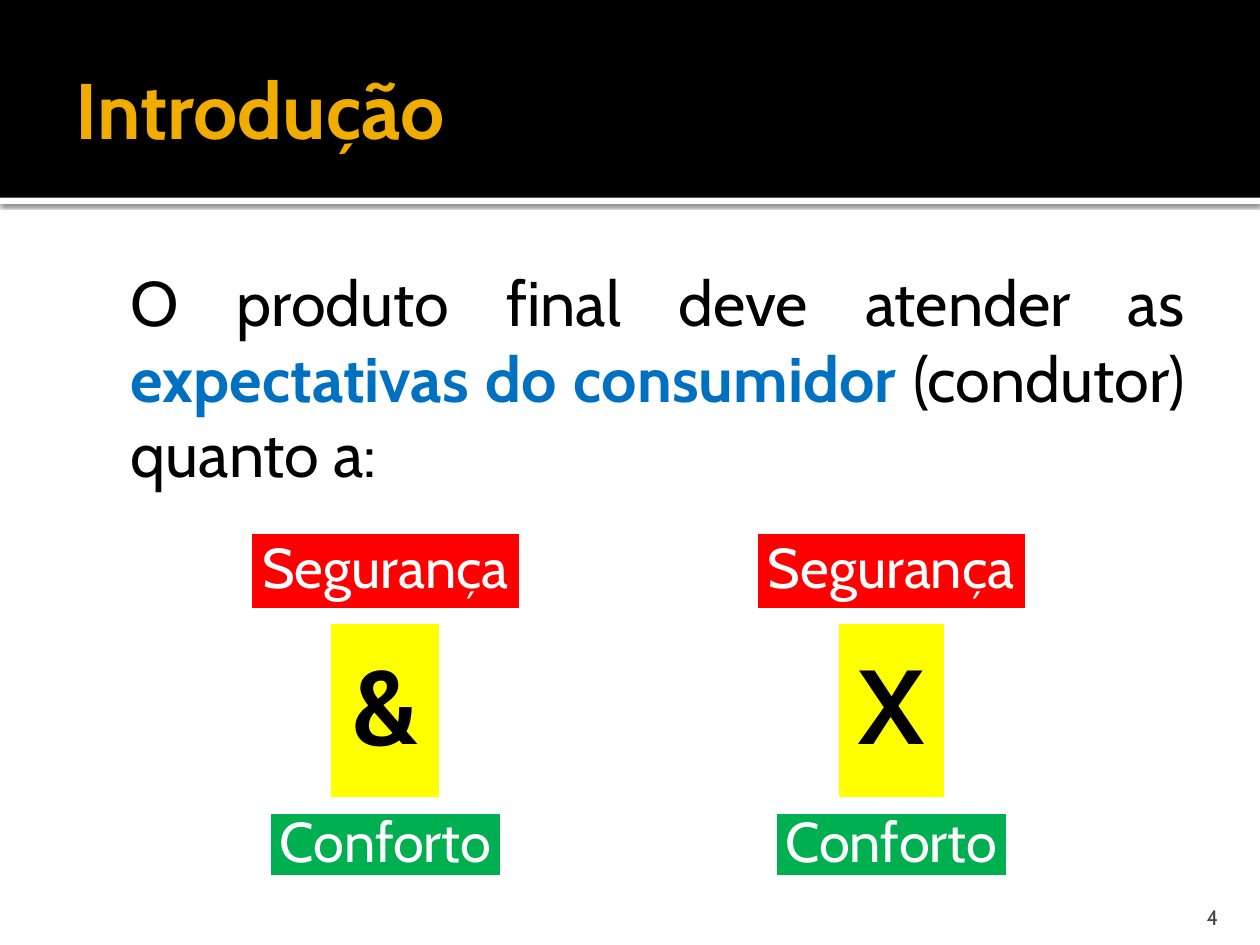
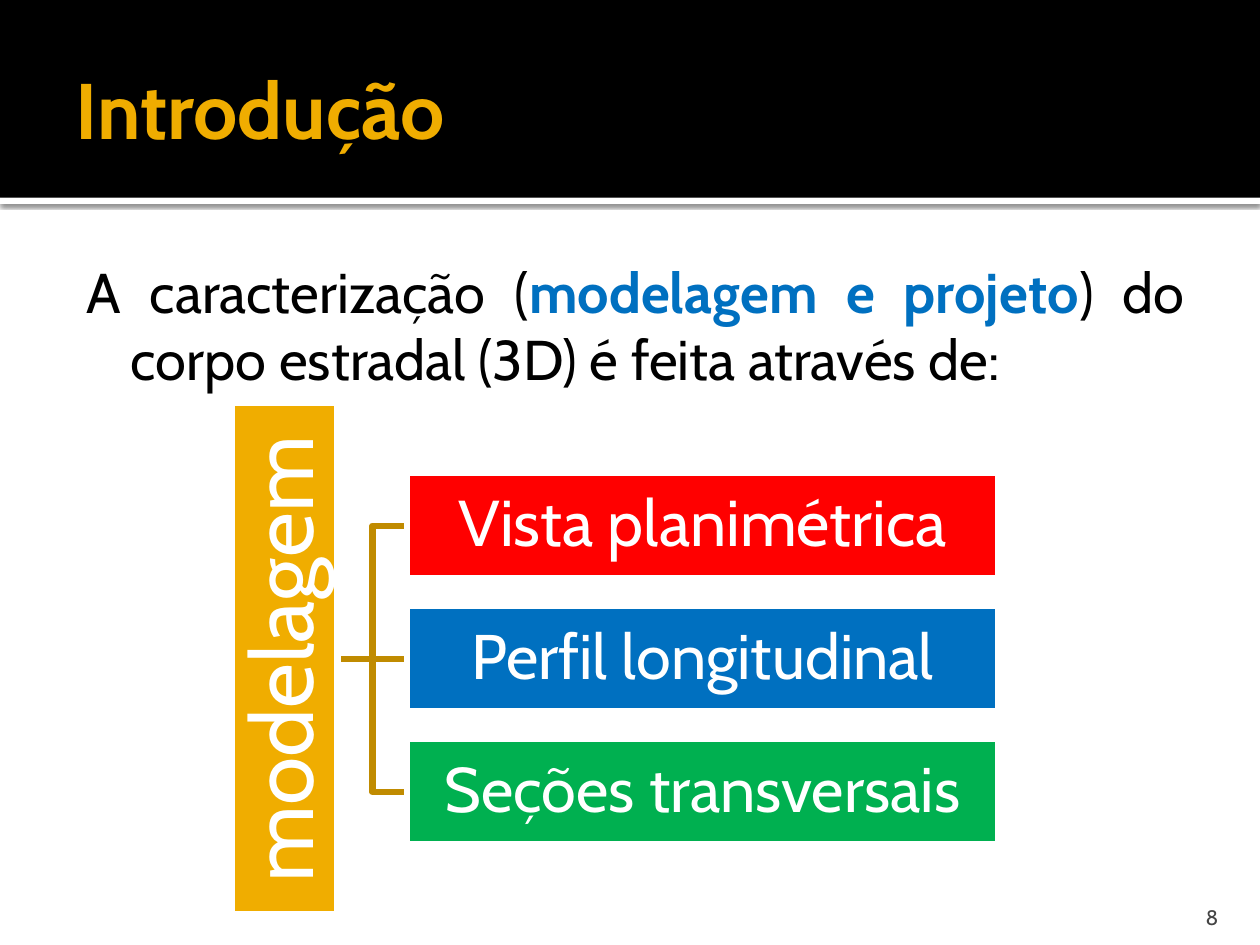
from lxml import etree
from pptx import Presentation
from pptx.dml.color import RGBColor
from pptx.enum import shapes, text
from pptx.oxml import ns
from pptx.util import Pt

FONT = "Cabin"
COLOURS = {
    "black": "000000", "white": "FFFFFF", "gold": "F0AD00", "bronze": "C08B00",
    "blue": "0070C0", "red": "FF0000", "green": "00B050", "yellow": "FFFF00",
    "grey": "454545",
}
WIDTH, HEIGHT = 720, 540
BAND_HEIGHT = 113
OUTLINE = 3.78


def colour(name):
    return RGBColor.from_string(COLOURS[name])


def add_span(para, words, size=36, ink="black", bold=False):
    span = para.add_run()
    span.text = words
    span.font.name = FONT
    span.font.size = Pt(size)
    span.font.bold = bold
    span.font.color.rgb = colour(ink)


class Painter:
    """Holds the deck and the page being drawn; all lengths are in points."""

    def __init__(self):
        self.deck = Presentation()
        self.deck.slide_width, self.deck.slide_height = Pt(WIDTH), Pt(HEIGHT)
        self.page = None

    def start_page(self, title, number):
        self.page = self.deck.slides.add_slide(self.deck.slide_layouts[5])
        # Header band and shadowed strip, placed behind the title
        heading = self.page.shapes.title
        strip = self.rectangle(0, BAND_HEIGHT, WIDTH, 3.6, "white")
        self.cast_shadow(strip)
        band = self.rectangle(0, 0, WIDTH, BAND_HEIGHT, "black")
        for part in (strip, band):
            heading.element.addprevious(part.element)
        # Title
        heading.left, heading.top, heading.width, heading.height = (
            Pt(value) for value in (36, 12.25, 648, 98.6))
        para = self.frame(heading, (7.2, 3.6, 3.6, 3.6), "MIDDLE", "LEFT")
        add_span(para, title, size=45, ink="gold", bold=True)
        # Page number
        self.text_box(645.8, 509.8, 57.6, 21.6, [(number, {"size": 12, "ink": "grey"})],
                      insets=(7.2, 3.6, 7.2, 0), anchor="BOTTOM", align="RIGHT")

    def frame(self, box, insets, anchor, align):
        frame = box.text_frame
        frame.word_wrap = True
        frame.auto_size = text.MSO_AUTO_SIZE.NONE
        frame.vertical_anchor = text.MSO_ANCHOR[anchor]
        (frame.margin_left, frame.margin_top,
         frame.margin_right, frame.margin_bottom) = (Pt(value) for value in insets)
        para = frame.paragraphs[0]
        para.alignment = text.PP_ALIGN[align]
        return para

    def text_box(self, left, top, width, height, spans, insets, anchor="TOP", align="JUSTIFY"):
        box = self.page.shapes.add_textbox(Pt(left), Pt(top), Pt(width), Pt(height))
        para = self.frame(box, insets, anchor, align)
        for words, style in spans:
            add_span(para, words, **style)
        return para

    def body(self, spans, size, hanging=0, top_inset=7.2):
        spans = [(words, {"size": size, **style}) for words, style in spans]
        para = self.text_box(36, 139.7, 648, 364.3, spans, (4.3, top_inset, 7.2, 3.6))
        properties = para._p.get_or_add_pPr()
        properties.set("marL", str(Pt(34.5)))
        properties.set("indent", str(-Pt(hanging)))

    def rectangle(self, left, top, width, height, fill, outline=None):
        box = self.page.shapes.add_shape(
            shapes.MSO_SHAPE.RECTANGLE, Pt(left), Pt(top), Pt(width), Pt(height))
        box.shadow.inherit = False
        box.fill.solid()
        box.fill.fore_color.rgb = colour(fill)
        if outline:
            self.stroke(box, outline)
        else:
            box.line.fill.background()
        return box

    def label(self, left, top, width, height, words, fill, inset, **style):
        box = self.rectangle(left, top, width, height, fill, "white")
        para = self.frame(box, (inset,) * 4, "MIDDLE", "CENTER")
        para.line_spacing = 0.9
        add_span(para, words, **style)
        return box

    def stroke(self, item, ink):
        item.line.color.rgb = colour(ink)
        item.line.width = Pt(OUTLINE)

    def cast_shadow(self, box):
        effects = box.element.spPr.find(ns.qn("a:effectLst"))
        shadow = etree.SubElement(effects, ns.qn("a:outerShdw"), blurRad=str(Pt(2.5)),
                                  dist=str(Pt(0.8)), dir="5400000", algn="tl", rotWithShape="0")
        tint = etree.SubElement(shadow, ns.qn("a:srgbClr"), val=COLOURS["black"])
        etree.SubElement(tint, ns.qn("a:alpha"), val="60000")

    def elbow(self, points):
        start, *rest = [(Pt(x), Pt(y)) for x, y in points]
        builder = self.page.shapes.build_freeform(*start)
        builder.add_line_segments(rest, close=False)
        branch = builder.convert_to_shape()
        branch.shadow.inherit = False
        branch.fill.background()
        self.stroke(branch, "bronze")

    def link(self, root, leaf, x, y):
        """Join the visible right side of a root turned by 270° to a leaf's left side."""
        line = self.page.shapes.add_connector(
            shapes.MSO_CONNECTOR.STRAIGHT, Pt(x), Pt(y), leaf.left, Pt(y))
        line.begin_connect(root, 2)
        line.end_connect(leaf, 1)
        line.begin_x, line.begin_y = Pt(x), line.end_y
        self.stroke(line, "bronze")
        etree.SubElement(line.element.spPr, ns.qn("a:effectLst"))
        root.element.addprevious(line.element)


def draw_expectations(painter):
    painter.start_page("Introdução", "4")
    painter.body([
        ("O produto final deve atender as ", {}),
        ("expectativas do consumidor", {"ink": "blue", "bold": True}),
        (" (condutor) quanto a:", {}),
    ], size=36, top_inset=11)
    # Two stacks: safety and comfort, safety versus comfort
    for centre, sign, sign_width in ((220.3, "&", 65.5), (509.4, "X", 64)):
        top = 303.1
        for words, width, height, fill, inset, style in (
            ("Segurança", 156.2, 46.1, "red", 6.5, {"size": 32, "ink": "white"}),
            (sign, sign_width, 103, "yellow", 12.2, {"size": 60, "bold": True}),
            ("Conforto", 134.6, 38.9, "green", 6.5, {"size": 32, "ink": "white"}),
        ):
            painter.label(centre - width / 2, top, width, height, words, fill, inset, **style)
            top += height + 5.4


def draw_modelling(painter):
    painter.start_page("Introdução", "8")
    painter.body([
        ("A caracterização (", {}),
        ("modelagem e projeto", {"ink": "blue", "bold": True}),
        (") do corpo estradal (3D) é feita através de:", {}),
    ], size=32, hanging=25.2)
    # Tree: a turned root, three leaves and the branches between them
    root_x, leaf_x, thickness, step = 193, 232.6, 60.5, 76
    middle_x, middle_y = (root_x + leaf_x) / 2, 376.5
    for offset in (step, -step):
        painter.elbow([(root_x, middle_y), (middle_x, middle_y),
                       (middle_x, middle_y + offset), (leaf_x, middle_y + offset)])
    length = 292.3
    root = painter.label(root_x - (thickness + length) / 2, middle_y - thickness / 2,
                         length, thickness, "modelagem", "gold", 2.2, size=50, ink="white")
    root.rotation = 270
    leaves = [
        painter.label(leaf_x, middle_y - thickness / 2 + row * step, 337.7, thickness,
                      words, fill, 2.2, size=size, ink="white")
        for row, words, fill, size in (
            (-1, "Vista planimétrica", "red", 37),
            (0, "Perfil longitudinal", "blue", 36),
            (1, "Seções transversais", "green", 36))
    ]
    painter.link(root, leaves[1], root_x, middle_y)


def main():
    painter = Painter()
    draw_expectations(painter)
    draw_modelling(painter)
    painter.deck.save("out.pptx")


if __name__ == "__main__":
    main()
